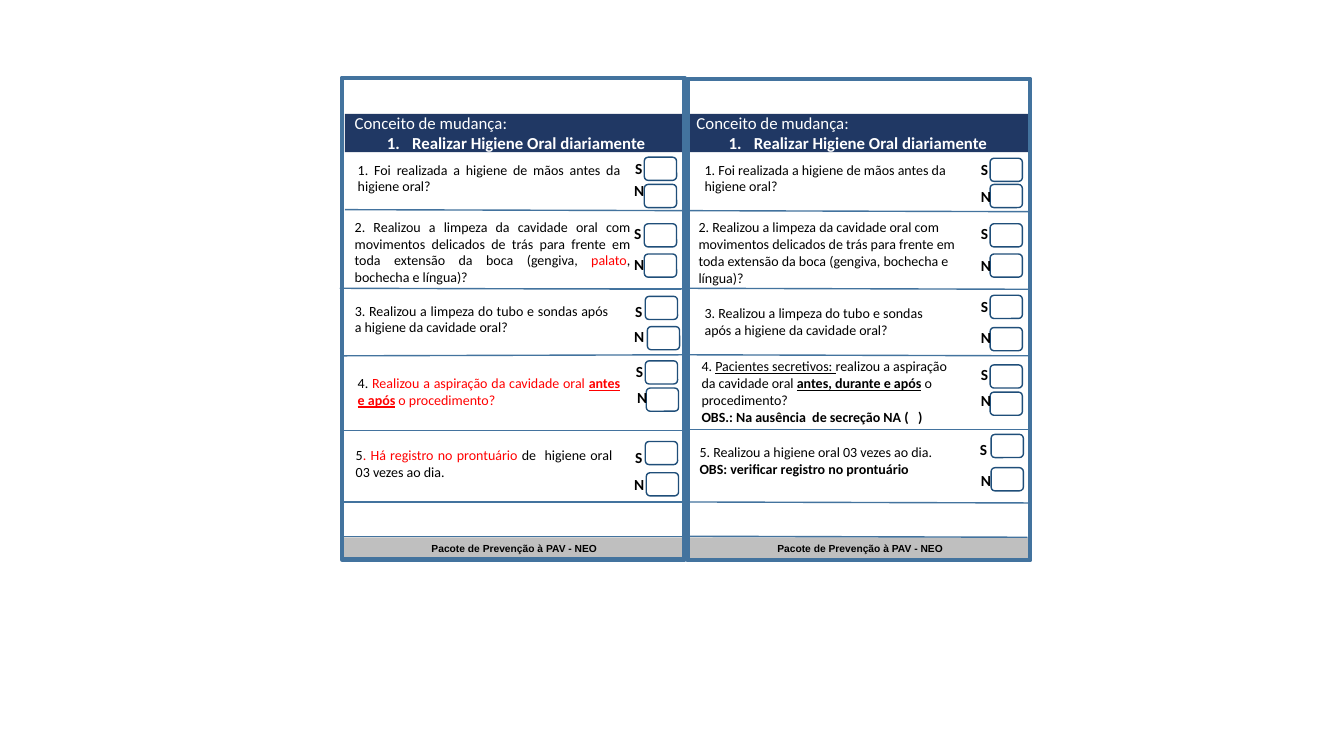
from pptx import Presentation
from pptx.dml.color import RGBColor
from pptx.enum.shapes import MSO_CONNECTOR, MSO_SHAPE
from pptx.enum.text import MSO_ANCHOR, PP_ALIGN
from pptx.oxml.ns import qn
from pptx.util import Pt
from lxml import etree

PX = 9144  # 100 px to the inch
RECTANGLE, ROUNDED = MSO_SHAPE.RECTANGLE, MSO_SHAPE.ROUNDED_RECTANGLE
STRAIGHT = MSO_CONNECTOR.STRAIGHT
MIDDLE = MSO_ANCHOR.MIDDLE
LEFT, CENTER, JUSTIFY = PP_ALIGN.LEFT, PP_ALIGN.CENTER, PP_ALIGN.JUSTIFY

COLORS = {"navy": "203864", "frame": "43739E", "check": "1F4E79", "gray": "BFBFBF",
          "black": "000000", "white": "FFFFFF", "red": "FF0000"}

# Span formats
PLAIN = {}
RED = {"color": "red"}
BOLD = {"bold": True}
UNDERLINED = {"underline": True}
STRONG = {"bold": True, "underline": True}
RED_STRONG = {"bold": True, "underline": True, "color": "red"}

QUESTION = {"size": 10}
LABEL = {"size": 11, "bold": True}
HEADER = {"size": 12, "color": "white"}
FOOTER = {"size": 7.3, "name": "Arial", "bold": True}

# Column parts: header, frame and footer as left, top, width, height
COLUMNS = [
    {"header": (342, 113, 340, 38), "frame": (339, 77, 340, 478), "footer": (340, 533, 340, 22)},
    {"header": (681, 113, 340, 38), "frame": (682, 78, 340, 478), "footer": (683, 533, 340, 22)},
]

# Question area, alignment, paragraphs, then (box left, top, label left, top) for S and N
QUESTIONS = [
    ((345, 151, 280, 51), JUSTIFY,
     [[("1. Foi realizada a higiene de mãos antes da higiene oral?", PLAIN)]],
     (639, 156, 620, 159), (639, 183, 619, 182)),
    ((342, 218, 293, 64), JUSTIFY,
     [[("2. Realizou a limpeza da cavidade oral com movimentos delicados de trás para "
        "frente em toda extensão da boca (gengiva, ", PLAIN),
       ("palato", RED), (", bochecha e língua)?", PLAIN)]],
     (639, 222, 619, 223), (639, 252, 619, 255)),
    ((342, 293, 271, 47), JUSTIFY,
     [[("3. Realizou a limpeza do tubo e sondas após a higiene da cavidade oral?", PLAIN)]],
     (640, 294, 620, 300), (642, 324, 619, 327)),
    ((345, 360, 280, 57), JUSTIFY,
     [[("4. ", PLAIN), ("Realizou a aspiração da cavidade oral ", RED),
       ("antes e após", RED_STRONG), (" o procedimento?", RED)]],
     (640, 358, 621, 360), (641, 385, 622, 387)),
    ((343, 436, 274, 48), JUSTIFY,
     [[("5", PLAIN), (". Há registro no prontuário ", RED),
       ("de  higiene oral 03 vezes ao dia.", PLAIN)]],
     (640, 438, 620, 445), (641, 469, 619, 474)),
    ((689, 151, 280, 51), LEFT,
     [[("1. Foi realizada a higiene de mãos antes da higiene oral?", PLAIN)]],
     (982, 157, 963, 160), (982, 183, 963, 188)),
    ((683, 218, 291, 65), LEFT,
     [[("2. Realizou a limpeza da cavidade oral com movimentos delicados de trás para "
        "frente em toda extensão da boca (gengiva, bochecha e língua)?", PLAIN)]],
     (982, 222, 963, 223), (982, 252, 963, 256)),
    ((689, 295, 257, 47), LEFT,
     [[("3. Realizou a limpeza do tubo e sondas após a higiene da cavidade oral?", PLAIN)]],
     (982, 293, 963, 295), (982, 325, 963, 328)),
    ((686, 360, 280, 57), LEFT,
     [[("4. ", PLAIN), ("Pacientes secretivos: ", UNDERLINED),
       ("realizou a aspiração da cavidade oral ", PLAIN),
       ("antes, durante e após", STRONG), (" o procedimento?", PLAIN)],
      [("OBS.: Na ausência  de secreção NA (   )", BOLD)]],
     (982, 362, 963, 363), (982, 389, 963, 390)),
    ((684, 433, 254, 48), LEFT,
     [[("5. Realizou a higiene oral 03 vezes ao dia.", PLAIN)],
      [("OBS: verificar registro no prontuário", BOLD)]],
     (983, 431, 962, 437), (983, 464, 963, 470)),
]

# Dividers as left, start height, end height
DIVIDER_WIDTH = 339
DIVIDERS = [
    (342, 208, 209), (341, 286, 286), (337, 286, 287), (341, 353, 352),
    (341, 427, 427), (340, 498, 498), (338, 532, 532),
    (682, 209, 210), (681, 286, 287), (684, 352, 353),
    (682, 426, 426), (684, 498, 499), (680, 532, 533),
]


def scale(lengths):
    return [length * PX for length in lengths]


def rgb(name):
    return RGBColor.from_string(COLORS[name])


def write(box, paragraphs, base, align):
    """Fill a box with paragraphs made of (text, format) spans."""
    frame = box.text_frame
    frame.word_wrap = True
    frame.vertical_anchor = MIDDLE
    for index, spans in enumerate(paragraphs):
        para = frame.paragraphs[0] if index == 0 else frame.add_paragraph()
        para.alignment = align
        for text, extra in spans:
            span = para.add_run()
            span.text = text
            values = {"name": "Calibri", "color": "black", **base, **extra}
            span.font.color.rgb = rgb(values.pop("color"))
            values["size"] = Pt(values["size"])
            for key, value in values.items():
                setattr(span.font, key, value)
    return frame


def add_text(page, area, paragraphs, base, align):
    write(page.shapes.add_textbox(*scale(area)), paragraphs, base, align)


def add_box(page, kind, area, fill=None, line=None, width=1):
    box = page.shapes.add_shape(kind, *scale(area))
    box.shadow.inherit = False
    if fill:
        box.fill.solid()
        box.fill.fore_color.rgb = rgb(fill)
    else:
        box.fill.background()
    if line:
        box.line.color.rgb = rgb(line)
        box.line.width = Pt(width)
    else:
        box.line.fill.background()
    return box


def add_header(page, area):
    lines = [[("Conceito de mudança:", PLAIN)], [("Realizar Higiene Oral diariamente", BOLD)]]
    frame = write(add_box(page, RECTANGLE, area, fill="navy"), lines, HEADER, LEFT)
    numbered = frame.paragraphs[1]
    numbered.alignment = CENTER
    properties = numbered._p.get_or_add_pPr()
    properties.set("marL", str(25 * PX))
    properties.set("indent", str(-25 * PX))
    etree.SubElement(properties, qn("a:buFont")).set("typeface", "+mj-lt")
    etree.SubElement(properties, qn("a:buAutoNum")).set("type", "arabicPeriod")


def add_option(page, letter, place, label_height):
    box_left, box_top, label_left, label_top = place
    add_box(page, ROUNDED, (box_left, box_top, 32, 23), line="check")
    area = (label_left, label_top, 24, label_height)
    add_text(page, area, [[(letter, PLAIN)]], LABEL, CENTER)


def add_divider(page, left, start, end):
    ends = scale((left, start, left + DIVIDER_WIDTH, end))
    line = page.shapes.add_connector(STRAIGHT, *ends)
    line.line.color.rgb = rgb("frame")
    line.line.width = Pt(1)
    etree.SubElement(line._element.spPr, qn("a:effectLst"))


def main():
    deck = Presentation()
    deck.slide_width, deck.slide_height = scale((1333, 750))
    page = deck.slides.add_slide(deck.slide_layouts[6])

    # Column bands and frames
    for column in COLUMNS:
        footer = add_box(page, RECTANGLE, column["footer"], fill="gray")
        write(footer, [[("Pacote de Prevenção à PAV - NEO", PLAIN)]], FOOTER, CENTER)
        add_header(page, column["header"])
    for column in COLUMNS:
        add_box(page, RECTANGLE, column["frame"], line="frame", width=3)

    # Row dividers
    for divider in DIVIDERS:
        add_divider(page, *divider)

    # Questions with their S and N boxes
    for area, align, paragraphs, yes, no in QUESTIONS:
        add_text(page, area, paragraphs, QUESTION, align)
        add_option(page, "S", yes, 17)
        add_option(page, "N", no, 14)

    deck.save("out.pptx")


if __name__ == "__main__":
    main()
